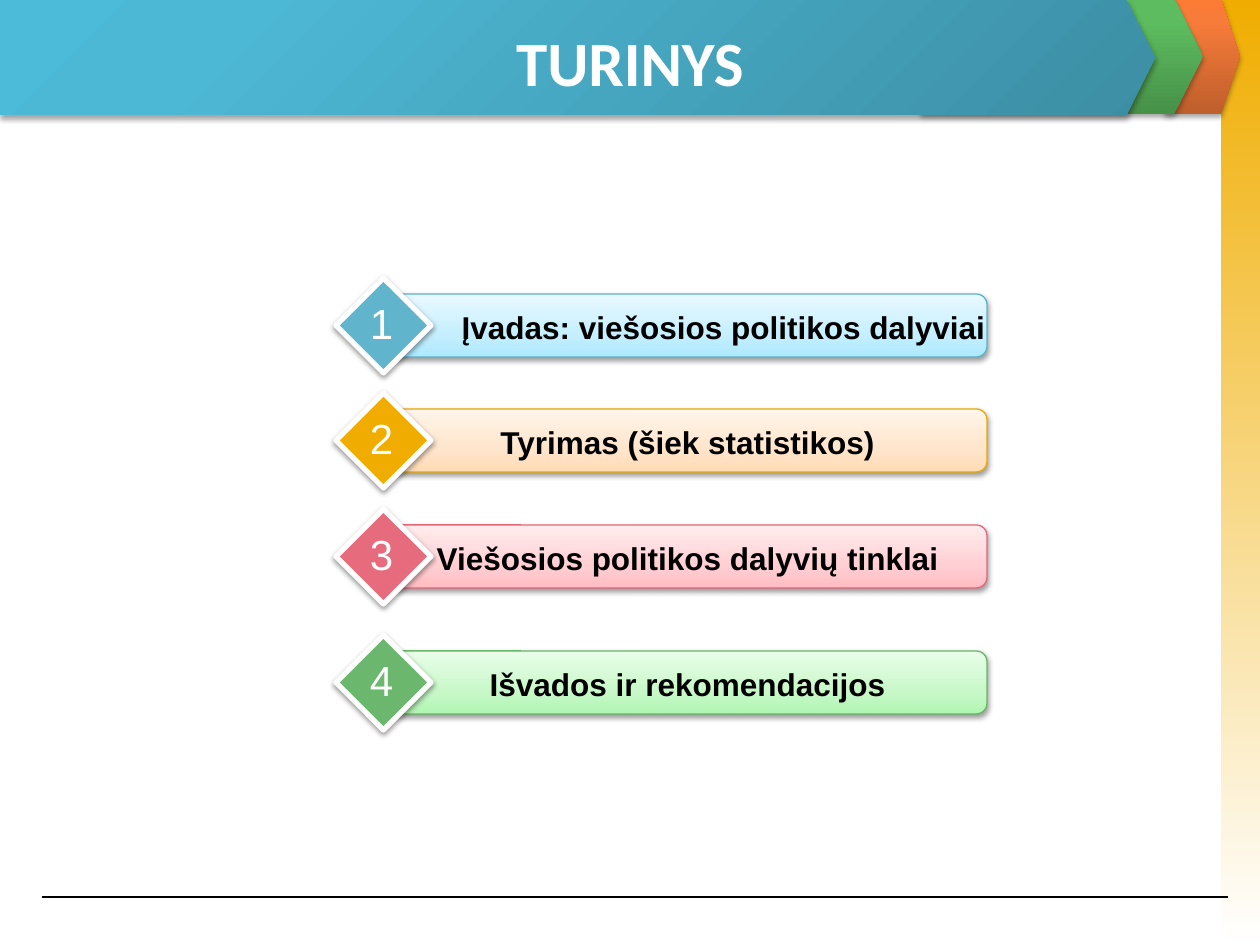
"""Build the TURINYS contents slide with a chevron header and four numbered topics."""
from lxml import etree
from pptx import Presentation, util as u
from pptx.dml.color import RGBColor
from pptx.enum import shapes, text
from pptx.oxml.ns import qn

SCALE = 914400 / 126
UP = ("lin", {"ang": "16200000", "scaled": "0"})
DOWN = ("lin", {"ang": "5400000", "scaled": "0"})
CORNER = ("path", {"path": "circle"})

TITLE = "TURINYS"
RAIL = ((1221, 0, 39, 945), [(0, "F0AD00"), (100, "FFFFFF")])
CHEVRONS = [
    ((1165, -1, 75, 115), [(0, "BE5F2C"), (80, "F77B39"), (100, "FC7B35")], UP),
    ((921, -1, 282, 115), [(0, "479149"), (80, "5DBC5F"), (100, "5BBF5E")], UP),
    ((0, 0, 1155, 115), [(0, "3C8EA4"), (80, "4DB8D5"), (100, "4BBBD9")], CORNER),
]
TOPICS = [
    ("Įvadas: viešosios politikos dalyviai", 294, 607, "60B5CC", "5BB3CA",
     ("ADE9FF", "C5EFFF", "E9F9FF")),
    ("Tyrimas (šiek statistikos)", 409, 535, "F0AD00", "EBA900",
     ("FFDBB5", "FFE5CB", "FFF5EB")),
    ("Viešosios politikos dalyvių tinklai", 525, 535, "E66C7D", "E46778",
     ("FFBCC2", "FFCFD3", "FFEDEE")),
    ("Išvados ir rekomendacijos", 651, 535, "6BB76D", "67B569",
     ("B0F6B1", "C8F8C8", "E9FDE9")),
]


def px(value):
    return u.Emu(round(value * SCALE))


def rgb(color):
    return RGBColor.from_string(color)


def add_child(parent, tag, **attributes):
    return etree.SubElement(parent, qn("a:" + tag), attributes)


def set_gradient(shape, stops, direction):
    gradient = add_child(shape.element.spPr, "gradFill", rotWithShape="1")
    stop_list = add_child(gradient, "gsLst")
    for position, color in stops:
        stop = add_child(stop_list, "gs", pos=str(position * 1000))
        add_child(stop, "srgbClr", val=color)
    tag, attributes = direction
    course = add_child(gradient, tag, **attributes)
    if direction is CORNER:
        add_child(course, "fillToRect", l="100000", t="100000")


def set_shadow(shape, opacity, distance):
    effects = shape.element.spPr.find(qn("a:effectLst"))
    shadow = add_child(effects, "outerShdw", blurRad=str(u.Pt(3.1)), dist=str(u.Pt(distance)),
                       dir="5400000", algn="ctr", rotWithShape="0")
    color = add_child(shadow, "srgbClr", val="000000")
    add_child(color, "alpha", val=str(opacity * 1000))


def add_block(slide, kind, box, fill, direction=UP, line=None, width=0.75, adjust=None):
    block = slide.shapes.add_shape(kind, *map(px, box))
    if adjust is not None:
        block.adjustments[0] = adjust
    if isinstance(fill, str):
        block.fill.solid()
        block.fill.fore_color.rgb = rgb(fill)
    else:
        set_gradient(block, fill, direction)
    if line:
        block.line.color.rgb = rgb(line)
        block.line.width = u.Pt(width)
    else:
        block.line.fill.background()
    block.shadow.inherit = False
    return block


def write(shape, words, size, font, color, bold=False):
    shape.text_frame.text = words
    paragraph = shape.text_frame.paragraphs[0]
    paragraph.alignment = text.PP_ALIGN.CENTER
    run_font = paragraph.runs[0].font
    run_font.size, run_font.name, run_font.bold = u.Pt(size), font, bold
    run_font.color.rgb = rgb(color)


def add_header(slide):
    box, stops = RAIL
    add_block(slide, shapes.MSO_SHAPE.RECTANGLE, box, stops, DOWN)
    for box, stops, direction in CHEVRONS:
        chevron = add_block(slide, shapes.MSO_SHAPE.PENTAGON, box, stops, direction, adjust=0.25)
        set_shadow(chevron, 35, 1.8)
    rule = slide.shapes.add_connector(shapes.MSO_CONNECTOR.STRAIGHT,
                                      px(42), px(897), px(1228), px(897))
    rule.line.color.rgb = rgb("000000")
    rule.line.width = u.Pt(0.75)
    add_child(rule.element.spPr, "effectLst")

    title = slide.shapes.title
    title.left, title.top, title.width, title.height = map(px, (63, 18, 1134, 87))
    title.text_frame.vertical_anchor = text.MSO_ANCHOR.MIDDLE
    write(title, TITLE, 36, "Calibri", "FFFFFF", True)
    slide.shapes.element.append(title.element)


def add_topic(slide, number, topic):
    words, top, label_width, accent, edge, tints = topic
    bar = add_block(slide, shapes.MSO_SHAPE.ROUNDED_RECTANGLE, (388, top, 599, 63),
                    list(zip((0, 35, 100), tints)), line=edge, adjust=0.17)
    diamond = add_block(slide, shapes.MSO_SHAPE.DIAMOND, (336, top - 16, 95, 95),
                        accent, line="FFFFFF", width=3)
    for shape in (bar, diamond):
        set_shadow(shape, 38, 1.6)

    label = slide.shapes.add_textbox(*map(px, (420, top + 8, label_width, 50)))
    label.text_frame.word_wrap = True
    write(label, words, 18, "Arial", "000000", True)
    numeral = slide.shapes.add_textbox(*map(px, (357, top - 3, 49, 63)))
    numeral.text_frame.word_wrap = False
    write(numeral, str(number), 24, "Arial", "FEFEFE")


def main():
    deck = Presentation()
    deck.slide_width, deck.slide_height = px(1260), px(945)
    slide = deck.slides.add_slide(deck.slide_layouts[5])
    add_header(slide)
    for number, topic in enumerate(TOPICS, 1):
        add_topic(slide, number, topic)
    deck.save("out.pptx")


if __name__ == "__main__":
    main()
